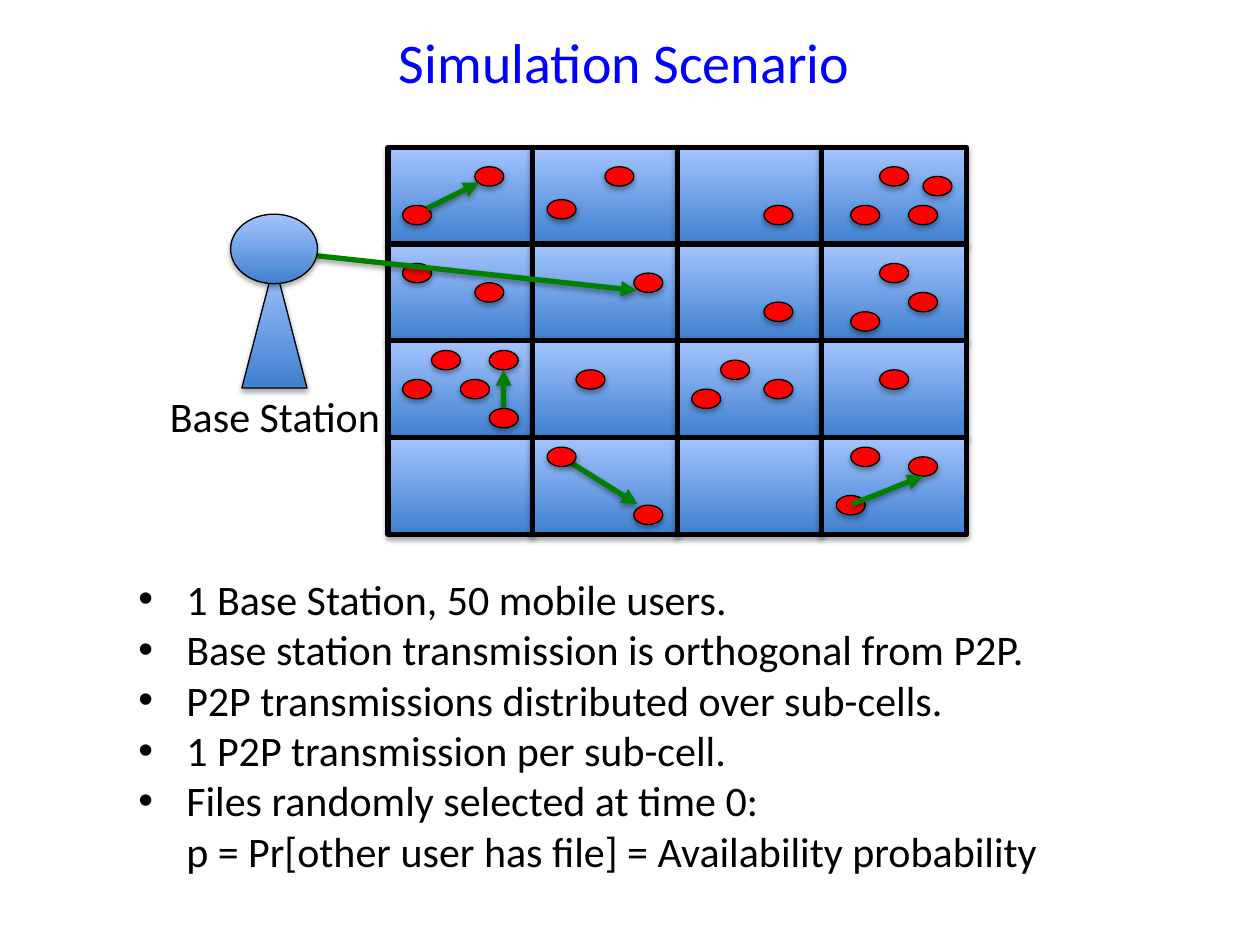
from dataclasses import dataclass
from lxml.etree import SubElement
from pptx import Presentation
from pptx.dml.color import RGBColor
from pptx.enum.shapes import MSO_CONNECTOR, MSO_SHAPE
from pptx.enum.text import MSO_ANCHOR, MSO_AUTO_SIZE, PP_ALIGN
from pptx.oxml.ns import qn
from pptx.util import Inches, Pt

BLACK, RED, GREEN, BLUE = "000000", "FF0000", "008000", "0000FF"
STEEL_TO_SKY = ("3F80CE", "A4C4FF")
SIDE = 4  # sub-cells per side of the grid

# Users per sub-cell (row, column), in tenths of the sub-cell
USERS = {
    (0, 0): [(1, 6), (6, 2)],
    (0, 1): [(1, 5.4), (5, 2)],
    (0, 2): [(6, 6)],
    (0, 3): [(2, 6), (4, 2), (6, 6), (7, 3)],
    (1, 0): [(6, 4), (1, 2)],
    (1, 1): [(7, 3)],
    (1, 2): [(6, 6)],
    (1, 3): [(4, 2), (6, 5), (2, 7)],
    (2, 0): [(1, 4), (3, 1), (5, 4), (7, 1)],
    (2, 1): [(3, 3)],
    (2, 2): [(1, 5), (3, 2), (6, 4)],
    (2, 3): [(4, 3)],
    (3, 1): [(7, 7)],
    (3, 3): [(6, 2), (1, 6)],
}
# Users that lie over the arrows
FRONT_USERS = {(2, 0): [(7, 7)], (3, 1): [(1, 1)], (3, 3): [(2, 1)]}
# P2P transmissions per sub-cell: start and end in tenths
TRANSMISSIONS = {
    (0, 0): [(2.7, 6.3), (6.3, 3.65)],
    (3, 1): [(2, 2), (7.25, 6.9)],
    (3, 3): [(2.1, 6.9), (7, 4)],
    (2, 0): [(8, 8), (8, 3)],
}
POINTS = [
    "1 Base Station, 50 mobile users.",
    "Base station transmission is orthogonal from P2P.",
    "P2P transmissions distributed over sub-cells.",
    "1 P2P transmission per sub-cell.",
    "Files randomly selected at time 0:",
]
FORMULA = "p = Pr[other user has file] = Availability probability"


@dataclass
class Box:
    left: float
    top: float
    width: float
    height: float

    def point(self, x, y):
        return self.left + x * self.width, self.top + y * self.height

    def inner(self, x, y, width, height):
        return Box(*self.point(x, y), width * self.width, height * self.height)

    def lengths(self):
        return [Inches(v) for v in (self.left, self.top, self.width, self.height)]


def colour(value):
    return RGBColor.from_string(value)


def add_shadow(effects, alpha, distance):
    shadow = SubElement(effects, qn("a:outerShdw"), blurRad=str(Pt(3.1)), dist=str(Pt(distance)),
                        dir="5400000", rotWithShape="0")
    tone = SubElement(shadow, qn("a:srgbClr"), val=BLACK)
    SubElement(tone, qn("a:alpha"), val=str(alpha * 1000))


def add_figure(page, kind, box, fill, line_width=0.75):
    """Place an outlined shape; a pair of colours fills it from bottom to top."""
    shape = page.shapes.add_shape(kind, *box.lengths())
    if isinstance(fill, tuple):
        shape.fill.gradient()
        shape.fill.gradient_angle = 90
        for stop, value, position in zip(shape.fill.gradient_stops, fill, (0, 1)):
            stop.color.rgb = colour(value)
            stop.position = position
    else:
        shape.fill.solid()
        shape.fill.fore_color.rgb = colour(fill)
    shape.line.color.rgb = colour(BLACK)
    shape.line.width = Pt(line_width)
    shape.shadow.inherit = False
    add_shadow(shape._element.spPr.find(qn("a:effectLst")), 35, 1.8)


def add_arrow(page, start, end):
    arrow = page.shapes.add_connector(MSO_CONNECTOR.STRAIGHT, *[Inches(v) for v in (*start, *end)])
    arrow.line.color.rgb = colour(GREEN)
    arrow.line.width = Pt(3)
    properties = arrow._element.spPr
    SubElement(properties.find(qn("a:ln")), qn("a:tailEnd"), type="triangle")
    add_shadow(SubElement(properties, qn("a:effectLst")), 38, 1.6)


def add_text(page, box, lines, size, tone=BLACK, wrap=False, align=PP_ALIGN.LEFT):
    frame = page.shapes.add_textbox(*box.lengths()).text_frame
    frame_format = {"word_wrap": wrap, "auto_size": MSO_AUTO_SIZE.SHAPE_TO_FIT_TEXT,
                    "vertical_anchor": MSO_ANCHOR.TOP}
    for name, value in frame_format.items():
        setattr(frame, name, value)
    for index, line in enumerate(lines):
        para = frame.paragraphs[0] if index == 0 else frame.add_paragraph()
        para.alignment = align
        span = para.add_run()
        span.text = line
        for name, value in {"name": "Calibri", "size": Pt(size)}.items():
            setattr(span.font, name, value)
        span.font.color.rgb = colour(tone)
    return frame


def place_cell_grid(page, box):
    share = 1 / SIDE
    cells = {(row, column): box.inner(column * share, row * share, share, share)
             for row in range(SIDE) for column in range(SIDE)}
    for cell in cells.values():
        add_figure(page, MSO_SHAPE.RECTANGLE, cell, STEEL_TO_SKY, 3)

    def place_users(users):
        for key, spots in users.items():
            for x, y in spots:
                add_figure(page, MSO_SHAPE.OVAL, cells[key].inner(x / 10, y / 10, 0.2, 0.2), RED)

    place_users(USERS)
    for key, ends in TRANSMISSIONS.items():
        add_arrow(page, *[cells[key].point(x / 10, y / 10) for x, y in ends])
    place_users(FRONT_USERS)
    return cells


def place_base_station(page, box, target):
    # Mast, transmission, head and label
    add_figure(page, MSO_SHAPE.ISOSCELES_TRIANGLE, box.inner(0.13, 0.28, 0.75, 0.72), STEEL_TO_SKY)
    add_arrow(page, box.point(0.64, 0.22), target)
    add_figure(page, MSO_SHAPE.OVAL, box.inner(0, 0, 1, 0.4), STEEL_TO_SKY)
    add_text(page, box.inner(-0.84, 0.98, 2.74, 0.36), ["Base Station"], 24)


def place_points(page, box):
    frame = add_text(page, box, POINTS + [FORMULA], 24, wrap=True)
    indent = Inches(0.38)
    for para in frame.paragraphs:
        properties = para._p.get_or_add_pPr()
        properties.set("marL", str(indent))
        if para.text in POINTS:
            properties.set("indent", str(-indent))
            SubElement(properties, qn("a:buFont"), typeface="Arial")
            SubElement(properties, qn("a:buChar"), char="•")


def main():
    deck = Presentation()
    deck.slide_width, deck.slide_height = Inches(10), Inches(7.5)
    page = deck.slides.add_slide(deck.slide_layouts[6])
    add_text(page, Box(3.05, 0.17, 3.81, 0.64), ["Simulation Scenario"], 32, BLUE,
             align=PP_ALIGN.CENTER)
    cells = place_cell_grid(page, Box(3.08, 1.17, 4.59, 3.07))
    place_base_station(page, Box(1.83, 1.7, 0.69, 1.38), cells[1, 1].point(0.72, 0.48))
    place_points(page, Box(1, 4.5, 7.92, 2.52))
    deck.save("out.pptx")


if __name__ == "__main__":
    main()
